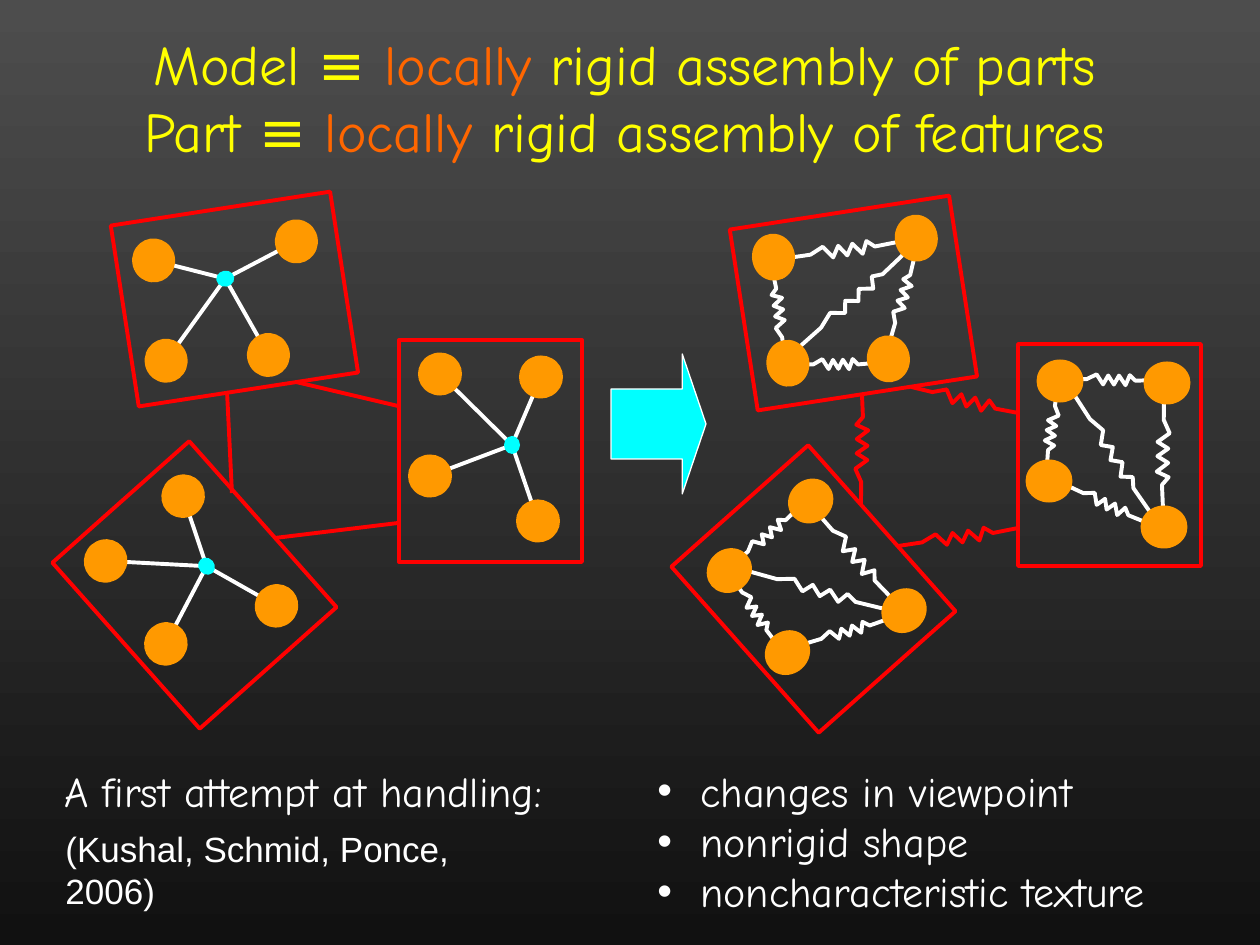
from math import cos, hypot, radians, sin

from lxml.etree import SubElement
from pptx import Presentation
from pptx.dml.color import RGBColor
from pptx.enum.shapes import MSO_CONNECTOR, MSO_SHAPE
from pptx.enum.text import MSO_AUTO_SIZE, PP_ALIGN
from pptx.oxml.ns import qn
from pptx.util import Inches, Pt

EMU_PER_PX = 914400 / 126
WHITE, RED, ORANGE, CYAN = "FFFFFF", "FF0000", "FF9900", "00FFFF"
YELLOW, DARK_ORANGE = "FFFF00", "FF6600"
COMIC = "Comic Neue"

FRAME_W, FRAME_H = 183, 222
FRAMES = [(399, 340, 0), (143, 188, 261.2), (103, 474, 318.4)]

STAR_NODES = [(41, 34), (142, 37), (31, 136), (139, 181)]
HUB = (113, 105)
STAR_LINKS = [((227, 391), (232, 493)), ((275, 538), (398, 523)), ((296, 382), (398, 406))]

SPRING_NODES = [(42, 37), (149, 39), (31, 137), (146, 183)]
NODE_SPRINGS = [
    ((146, 54), (145, 164), 6),
    ((39, 47), (29, 122), 5),
    ((57, 52), (132, 168), 5),
    ((50, 142), (127, 178), 5),
    ((52, 35), (135, 36), 5),
]
SPRING_LINKS = [((242, 500), (243, 390)), ((279, 542), (399, 524)), ((292, 383), (399, 409))]
SPRING_SHIFTS = [(0, 0), (0, 0), (2, 4)]
COIL = [(0, 0), (0.2, 0), (0.32, -1), (0.4, 1), (0.46, -0.8), (0.53, 1),
        (0.59, -0.8), (0.67, 1.1), (0.72, -0.9), (0.79, 0.2), (1, 0)]


def px(length):
    return round(length * EMU_PER_PX)


def color(value):
    return RGBColor.from_string(value)


def stroke(part, value, width=2.25):
    part.line.color.rgb = color(value)
    part.line.width = Pt(width)


def draw_shape(shapes, kind, box, fill=None, outline=None, rotation=0, width=2.25):
    part = shapes.add_shape(kind, *map(px, box))
    part.rotation = rotation
    part.shadow.inherit = False
    if fill:
        part.fill.solid()
        part.fill.fore_color.rgb = color(fill)
    else:
        part.fill.background()
    if outline:
        stroke(part, outline, width)
    else:
        part.line.fill.background()
    return part


def draw_dot(shapes, center, size, fill, rotation):
    box = (center[0] - size[0] / 2, center[1] - size[1] / 2, *size)
    draw_shape(shapes, MSO_SHAPE.OVAL, box, fill, rotation=rotation)


def draw_line(shapes, start, end, value):
    link = shapes.add_connector(MSO_CONNECTOR.STRAIGHT, *map(px, (*start, *end)))
    stroke(link, value)
    SubElement(link._element.spPr, qn("a:effectLst"))


def draw_spring(shapes, start, end, amplitude, value):
    dx, dy = end[0] - start[0], end[1] - start[1]
    swing = amplitude / hypot(dx, dy)
    points = [(px(start[0] + along * dx - across * swing * dy),
               px(start[1] + along * dy + across * swing * dx)) for along, across in COIL]
    outline = shapes.build_freeform(*points[0], scale=1.0)
    outline.add_line_segments(points[1:], close=False)
    spring = outline.convert_to_shape()
    spring.fill.background()
    spring.shadow.inherit = False
    stroke(spring, value)


def frame_mapper(left, top, rotation, shift=(0, 0)):
    turn = radians(rotation)

    def to_slide(point):
        x, y = point[0] - FRAME_W / 2, point[1] - FRAME_H / 2
        return (left + FRAME_W / 2 + shift[0] + x * cos(turn) - y * sin(turn),
                top + FRAME_H / 2 + shift[1] + x * sin(turn) + y * cos(turn))

    return to_slide


def draw_frame(shapes, left, top, rotation):
    draw_shape(shapes, MSO_SHAPE.RECTANGLE, (left, top, FRAME_W, FRAME_H),
               outline=RED, rotation=rotation)


def star_part(shapes, left, top, rotation):
    to_slide = frame_mapper(left, top, rotation)
    nodes = [to_slide(node) for node in STAR_NODES]
    hub = to_slide(HUB)
    for node in nodes:
        draw_line(shapes, hub, node, WHITE)
    for node in nodes:
        draw_dot(shapes, node, (44, 43), ORANGE, rotation)
    draw_dot(shapes, hub, (16, 18), CYAN, rotation)
    draw_frame(shapes, left, top, rotation)


def spring_part(shapes, left, top, rotation, shift):
    to_slide = frame_mapper(left, top, rotation, shift)
    draw_frame(shapes, left, top, rotation)
    for start, end, amplitude in NODE_SPRINGS:
        draw_spring(shapes, to_slide(start), to_slide(end), amplitude, WHITE)
    for node in SPRING_NODES:
        draw_dot(shapes, to_slide(node), (47, 43), ORANGE, rotation)


def rigid_model(slide, left, top):
    shapes = slide.shapes.add_group_shape().shapes
    for x, y, rotation in FRAMES:
        star_part(shapes, left + x, top + y, rotation)
    for (x1, y1), (x2, y2) in STAR_LINKS:
        draw_line(shapes, (left + x1, top + y1), (left + x2, top + y2), RED)


def elastic_model(slide, left, top):
    shapes = slide.shapes.add_group_shape().shapes
    for (x1, y1), (x2, y2) in SPRING_LINKS:
        draw_spring(shapes, (left + x1, top + y1), (left + x2, top + y2), 6, RED)
    for (x, y, rotation), shift in zip(FRAMES, SPRING_SHIFTS):
        spring_part(shapes, left + x, top + y, rotation, shift)


def text_block(slide, box, lines, size, font=COMIC, align=PP_ALIGN.LEFT, bulleted=False):
    frame = slide.shapes.add_textbox(*map(px, box)).text_frame
    frame.word_wrap = True
    frame.auto_size = MSO_AUTO_SIZE.SHAPE_TO_FIT_TEXT
    for index, line in enumerate(lines):
        paragraph = frame.add_paragraph() if index else frame.paragraphs[0]
        if bulleted:
            properties = paragraph._p.get_or_add_pPr()
            properties.set("marL", str(px(43)))
            properties.set("indent", str(-px(43)))
            SubElement(properties, qn("a:buFont"), typeface="Arial")
            SubElement(properties, qn("a:buChar"), char="•")
        paragraph.alignment = align
        for words, value in line:
            run = paragraph.add_run()
            run.text = words
            run.font.size = Pt(size)
            run.font.name = font
            run.font.color.rgb = color(value)


def title(slide, box):
    lines = [
        [("Model ≡ ", YELLOW), ("locally ", DARK_ORANGE), ("rigid assembly of parts", YELLOW)],
        [("Part ≡ ", YELLOW), ("locally", DARK_ORANGE), (" rigid assembly of features", YELLOW)],
    ]
    text_block(slide, box, lines, 32, align=PP_ALIGN.CENTER)


def summary(slide, left, top):
    text_block(slide, (left + 1, top + 62, 500, 54),
               [[("(Kushal, Schmid, Ponce, 2006)", WHITE)]], 20, "Arial")
    text_block(slide, (left, top, 585, 63), [[("A first attempt at handling:", WHITE)]], 24)
    changes = ["changes in viewpoint", "nonrigid shape", "noncharacteristic texture"]
    text_block(slide, (left + 593, top, 563, 164),
               [[(change, WHITE)] for change in changes], 24, bulleted=True)


def background(slide):
    fill = slide.background.fill
    fill.gradient()
    fill.gradient_angle = 270
    for stop, value in zip(fill.gradient_stops, ("4D4D4D", "111111")):
        stop.color.rgb = color(value)


def main():
    deck = Presentation()
    deck.slide_width, deck.slide_height = Inches(10), Inches(7.5)
    slide = deck.slides.add_slide(deck.slide_layouts[6])
    background(slide)
    summary(slide, 52, 759)
    title(slide, (88, 23, 1074, 147))
    rigid_model(slide, 0, 0)
    elastic_model(slide, 619, 4)
    arrow = draw_shape(slide.shapes, MSO_SHAPE.RIGHT_ARROW, (611, 354, 95, 140),
                       CYAN, WHITE, width=0.75)
    arrow.adjustments[0], arrow.adjustments[1] = 0.5, 0.25
    deck.save("out.pptx")


if __name__ == "__main__":
    main()
